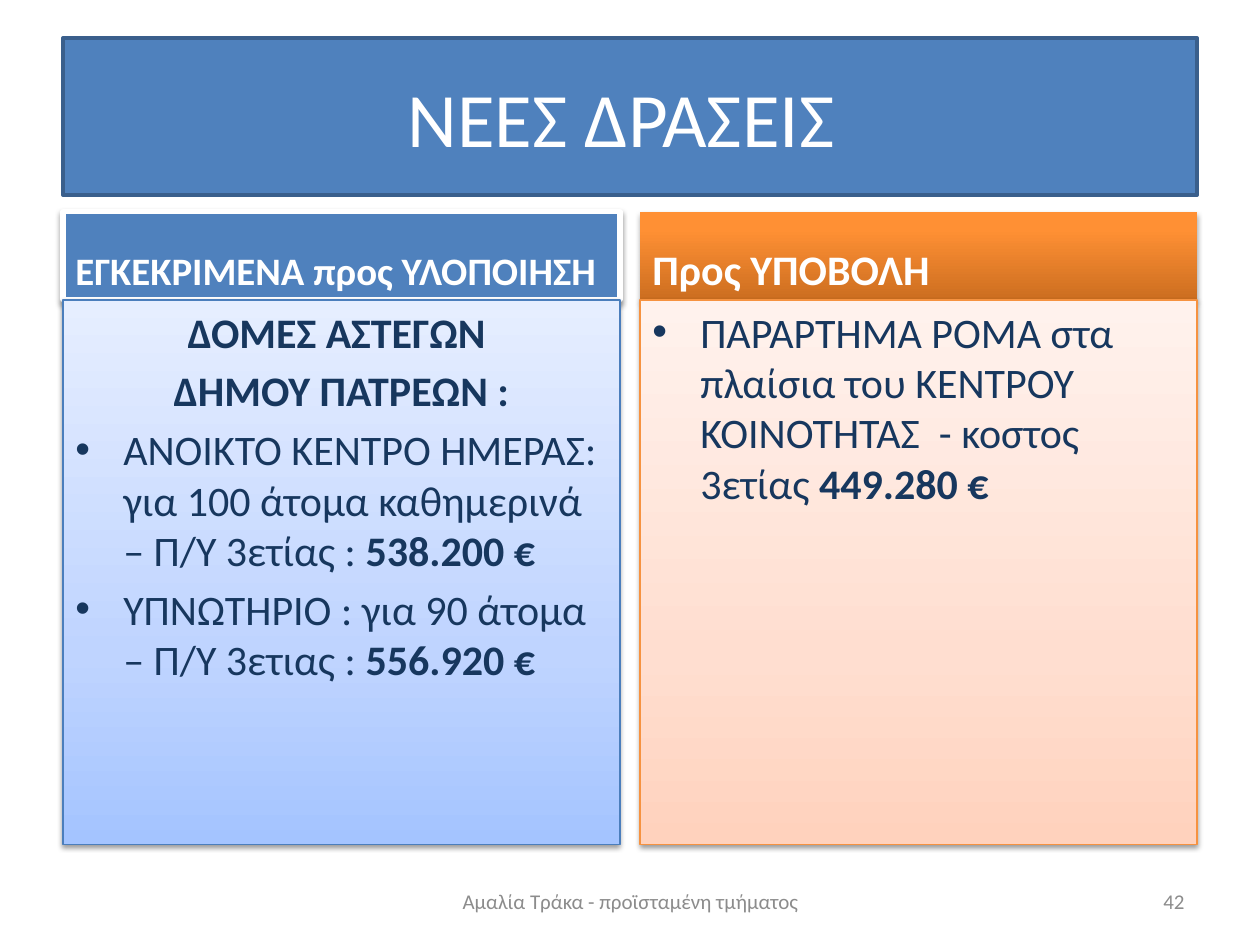
from lxml import etree
from pptx import Presentation
from pptx.dml.color import RGBColor
from pptx.enum import shapes, text
from pptx.oxml.ns import qn
from pptx.util import Inches, Pt

WHITE = RGBColor(0xFF, 0xFF, 0xFF)
BLUE = RGBColor(0x4F, 0x81, 0xBD)
TITLE_EDGE = RGBColor(0x3A, 0x5F, 0x8C)
BLUE_EDGE = RGBColor(0x4B, 0x7E, 0xBC)
ORANGE_EDGE = RGBColor(0xF6, 0x92, 0x40)
NAVY = RGBColor(0x17, 0x37, 0x5E)
GREY = RGBColor(0x8C, 0x8C, 0x8C)
# Gradient stops run from the bottom of a shape to its top.
BLUE_FADE = [(0, RGBColor(0xA4, 0xC4, 0xFF)), (35, RGBColor(0xBF, 0xD4, 0xFF)),
             (100, RGBColor(0xE6, 0xEE, 0xFF))]
ORANGE_FADE = [(0, RGBColor(0xCC, 0x6E, 0x20)), (80, RGBColor(0xFF, 0x90, 0x34)),
               (100, RGBColor(0xFF, 0x91, 0x36))]
PEACH_FADE = [(0, RGBColor(0xFF, 0xD2, 0xBD)), (35, RGBColor(0xFF, 0xDE, 0xD0)),
              (100, RGBColor(0xFF, 0xF2, 0xED))]

LEFT, WIDTH, COLUMN_WIDTH = 0.5, 9, 4.42
HEADER_TOP, HEADER_HEIGHT, BODY_HEIGHT = 1.68, 0.7, 4.32
FOOTER_TOP, FOOTER_HEIGHT = 6.95, 0.4
INDENT = 0.38

TITLE = "ΝΕΕΣ ΔΡΑΣΕΙΣ "
# A paragraph is a list of (text, bold) runs.
COLUMNS = [
    {
        "header": "ΕΓΚΕΚΡΙΜΕΝΑ προς ΥΛΟΠΟΙΗΣΗ", "header_size": 22.2,
        "header_fill": BLUE, "header_line": (WHITE, 3), "header_shadow": (38, 1.6),
        "body_fill": BLUE_FADE, "body_line": (BLUE_EDGE, 0.75),
        "headings": [[("ΔΟΜΕΣ ΑΣΤΕΓΩΝ ", True)], [("ΔΗΜΟΥ ΠΑΤΡΕΩΝ :", True)]],
        "bullets": [
            [("ΑΝΟΙΚΤΟ ΚΕΝΤΡΟ ΗΜΕΡΑΣ: για 100 άτομα καθημερινά – Π/Υ 3ετίας : ", False),
             ("538.200 €", True)],
            [("ΥΠΝΩΤΗΡΙΟ : για 90 άτομα – Π/Υ 3ετιας : ", False), ("556.920 €", True)],
        ],
    },
    {
        "header": "Προς ΥΠΟΒΟΛΗ", "header_size": 24,
        "header_fill": ORANGE_FADE, "header_line": None, "header_shadow": (35, 1.8),
        "body_fill": PEACH_FADE, "body_line": (ORANGE_EDGE, 0.75),
        "headings": [],
        "bullets": [
            [("ΠΑΡΑΡΤΗΜΑ ΡΟΜΑ στα πλαίσια του ΚΕΝΤΡΟΥ ΚΟΙΝΟΤΗΤΑΣ  - κοστος 3ετίας ", False),
             ("449.280 €", True)],
        ],
    },
]
FOOTERS = [  # left, width, text, alignment
    (3.42, 3.17, "Αμαλία Τράκα - προϊσταμένη τμήματος", text.PP_ALIGN.CENTER),
    (7.17, 2.33, "42", text.PP_ALIGN.RIGHT),
]


def add_color(parent, color):
    return etree.SubElement(parent, qn("a:srgbClr"), val=str(color))


def set_gradient(shape, stops):
    shape.fill.gradient()
    gradient = shape._element.spPr.find(qn("a:gradFill"))
    for child in list(gradient):
        gradient.remove(child)
    stop_list = etree.SubElement(gradient, qn("a:gsLst"))
    for position, color in stops:
        stop = etree.SubElement(stop_list, qn("a:gs"), pos=str(position * 1000))
        add_color(stop, color)
    etree.SubElement(gradient, qn("a:lin"), ang="16200000", scaled="0")


def set_shadow(shape, opacity, distance):
    shape.shadow.inherit = False
    effects = shape._element.spPr.find(qn("a:effectLst"))
    shadow = etree.SubElement(effects, qn("a:outerShdw"), blurRad=str(Pt(3.1)),
                              dist=str(Pt(distance)), dir="5400000", rotWithShape="0")
    color = add_color(shadow, RGBColor(0, 0, 0))
    etree.SubElement(color, qn("a:alpha"), val=str(opacity * 1000))


def style_box(shape, fill, line):
    if isinstance(fill, list):
        set_gradient(shape, fill)
    else:
        shape.fill.solid()
        shape.fill.fore_color.rgb = fill
    if line is None:
        shape.line.fill.background()
    else:
        color, width = line
        shape.line.color.rgb = color
        shape.line.width = Pt(width)


def add_panel(slide, box, fill, line, shadow):
    panel = slide.shapes.add_shape(shapes.MSO_SHAPE.RECTANGLE, *map(Inches, box))
    style_box(panel, fill, line)
    set_shadow(panel, *shadow)
    return panel


def write(shape, paragraphs, *, size, color, align=text.PP_ALIGN.LEFT,
          anchor=text.MSO_ANCHOR.MIDDLE, headings=0, bulleted=False):
    """Write paragraphs of runs; the first `headings` are centred and have no bullet."""
    frame = shape.text_frame
    frame.word_wrap = True
    frame.auto_size = text.MSO_AUTO_SIZE.NONE
    frame.vertical_anchor = anchor
    for index, runs in enumerate(paragraphs):
        paragraph = frame.paragraphs[0] if index == 0 else frame.add_paragraph()
        paragraph.alignment = text.PP_ALIGN.CENTER if index < headings else align
        paragraph.space_before = Pt(size * 0.2 if index else 0)
        if bulleted:
            properties = paragraph._p.get_or_add_pPr()
            properties.set("marL", str(Inches(INDENT)))
            properties.set("indent", str(-Inches(INDENT)))
            if index >= headings:
                etree.SubElement(properties, qn("a:buFont"), typeface="Arial")
                etree.SubElement(properties, qn("a:buChar"), char="•")
        for content, bold in runs:
            run = paragraph.add_run()
            run.text = content
            run.font.name = "Calibri"
            run.font.size = Pt(size)
            run.font.bold = bold
            run.font.color.rgb = color


def add_column(slide, left, column):
    header = add_panel(slide, (left, HEADER_TOP, COLUMN_WIDTH, HEADER_HEIGHT),
                       column["header_fill"], column["header_line"], column["header_shadow"])
    write(header, [[(column["header"], True)]], size=column["header_size"], color=WHITE,
          anchor=text.MSO_ANCHOR.BOTTOM)
    body = add_panel(slide, (left, HEADER_TOP + HEADER_HEIGHT, COLUMN_WIDTH, BODY_HEIGHT),
                     column["body_fill"], column["body_line"], (38, 1.6))
    write(body, column["headings"] + column["bullets"], size=24, color=NAVY,
          anchor=text.MSO_ANCHOR.TOP, headings=len(column["headings"]), bulleted=True)


def main():
    presentation = Presentation()
    presentation.slide_width, presentation.slide_height = Inches(10), Inches(7.5)
    slide = presentation.slides.add_slide(presentation.slide_layouts[5])

    title = slide.shapes.title
    title.left, title.top, title.width, title.height = map(Inches, (LEFT, 0.3, WIDTH, 1.25))
    style_box(title, BLUE, (TITLE_EDGE, 2))
    write(title, [[(TITLE, False)]], size=44, color=WHITE, align=text.PP_ALIGN.CENTER)

    for index, column in enumerate(COLUMNS):
        add_column(slide, LEFT + index * (WIDTH - COLUMN_WIDTH), column)

    for left, width, content, align in FOOTERS:
        footer = slide.shapes.add_textbox(Inches(left), Inches(FOOTER_TOP),
                                          Inches(width), Inches(FOOTER_HEIGHT))
        write(footer, [[(content, False)]], size=12, color=GREY, align=align)

    presentation.save("out.pptx")


if __name__ == "__main__":
    main()
